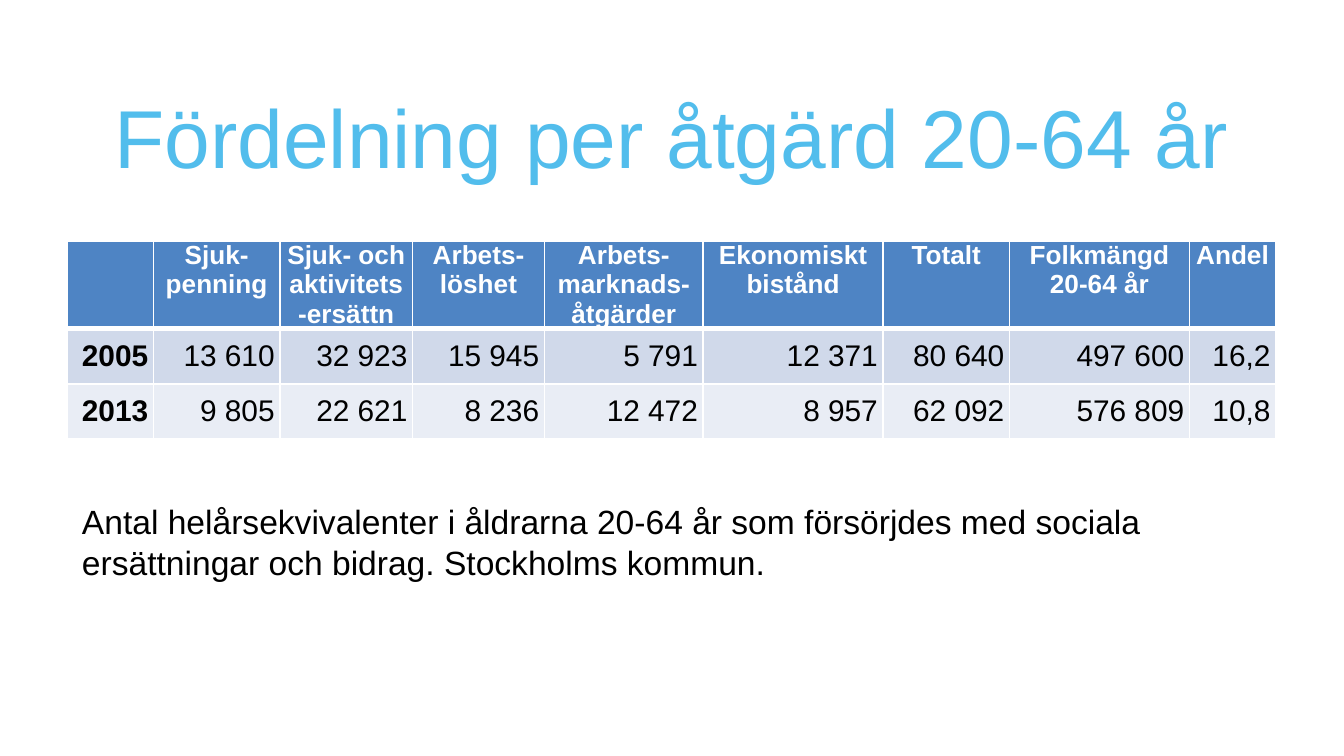
from lxml import etree
from pptx import Presentation
from pptx.dml.color import RGBColor
from pptx.enum import text
from pptx.oxml.ns import qn
from pptx.util import Cm, Pt

WHITE, BLACK, SKY, BLUE = "FFFFFF", "000000", "52BDEC", "4E84C4"
BANDS = ["D0D9EA", "E9EDF5"]
WIDTHS = [1.63, 2.39, 2.51, 2.49, 3, 3.4, 2.39, 3.4, 1.63]
HEAD = ["", "Sjuk-penning", "Sjuk- och aktivitets-ersättn", "Arbets-löshet",
        "Arbets-marknads-åtgärder", "Ekonomiskt bistånd", "Totalt",
        "Folkmängd 20-64 år", "Andel"]
ROWS = [
    ["2005", "13 610", "32 923", "15 945", "5 791", "12 371", "80 640", "497 600", "16,2"],
    ["2013", "9 805", "22 621", "8 236", "12 472", "8 957", "62 092", "576 809", "10,8"],
]
ALIGN, ANCHOR = text.PP_ALIGN, text.MSO_ANCHOR


def color(code):
    return RGBColor.from_string(code)


def apply(item, values):
    for name, value in values.items():
        setattr(item, name, value)


def write(frame, words, size, code, align, bold=False):
    frame.text = words
    para = frame.paragraphs[0]
    para.alignment = align
    for run in para.runs:
        apply(run.font, {"name": "Arial", "size": Pt(size), "bold": bold})
        run.font.color.rgb = color(code)


def place(shape, box):
    sides = ("left", "top", "width", "height")
    apply(shape, {side: Cm(value) for side, value in zip(sides, box)})


def border(cell, sides):
    props = cell._tc.get_or_add_tcPr()
    for side, width in sides.items():
        line = etree.SubElement(props, qn("a:ln" + side), w=str(Pt(width)))
        fill = etree.SubElement(line, qn("a:solidFill"))
        etree.SubElement(fill, qn("a:srgbClr"), val=WHITE)


def add_title(slide, box):
    title = slide.shapes.title
    place(title, box)
    apply(title.text_frame, {"word_wrap": True, "vertical_anchor": ANCHOR.MIDDLE})
    write(title.text_frame, "Fördelning per åtgärd 20-64 år", 44, SKY, ALIGN.CENTER)


def add_grid(slide, box):
    data = [HEAD] + ROWS
    frame = slide.shapes.add_table(len(data), len(HEAD), *map(Cm, box))
    grid = frame.table
    for col, width in zip(grid.columns, WIDTHS):
        col.width = Cm(width)
    for row, height in zip(grid.rows, [1.65, 1.04, 1.04]):
        row.height = Cm(height)
    for r, line in enumerate(data):
        top = r == 0
        for c, words in enumerate(line):
            cell = grid.cell(r, c)
            apply(cell, {
                "margin_left": Cm(0.1), "margin_right": Cm(0.1),
                "margin_top": 0, "margin_bottom": 0,
                "vertical_anchor": ANCHOR.TOP if top else ANCHOR.MIDDLE,
            })
            # A thick rule parts the header from the body
            border(cell, {"L": 1, "R": 1, "T": 3 if r == 1 else 1, "B": 3 if top else 1})
            cell.fill.solid()
            cell.fill.fore_color.rgb = color(BLUE if top else BANDS[r - 1])
            if top:
                write(cell.text_frame, words, 14, WHITE, ALIGN.CENTER, True)
            else:
                write(cell.text_frame, words, 16, BLACK, ALIGN.RIGHT, c == 0)


def add_note(slide, box):
    frame = slide.shapes.add_textbox(*map(Cm, box)).text_frame
    apply(frame, {"word_wrap": True, "auto_size": text.MSO_AUTO_SIZE.SHAPE_TO_FIT_TEXT})
    write(frame, "Antal helårsekvivalenter i åldrarna 20-64 år som försörjdes med sociala "
          "ersättningar och bidrag. Stockholms kommun.", 18, BLACK, ALIGN.LEFT)


def main():
    deck = Presentation()
    apply(deck, {"slide_width": Cm(25.4), "slide_height": Cm(14.29)})
    slide = deck.slides.add_slide(deck.slide_layouts[5])
    add_title(slide, (1.27, 1.37, 22.86, 2.39))
    add_grid(slide, (1.27, 4.55, 22.86, 3.73))
    add_note(slide, (1.3, 9.35, 22.81, 1.8))
    deck.save("out.pptx")


if __name__ == "__main__":
    main()
